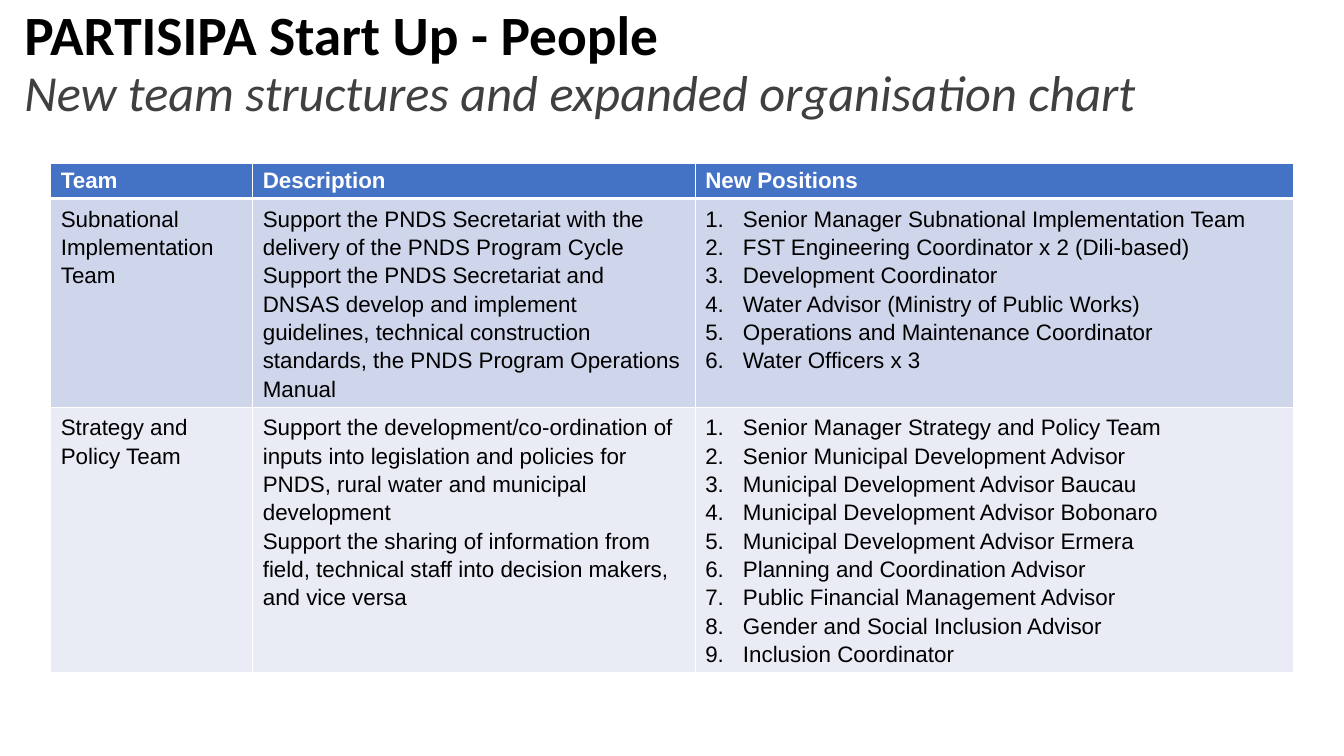
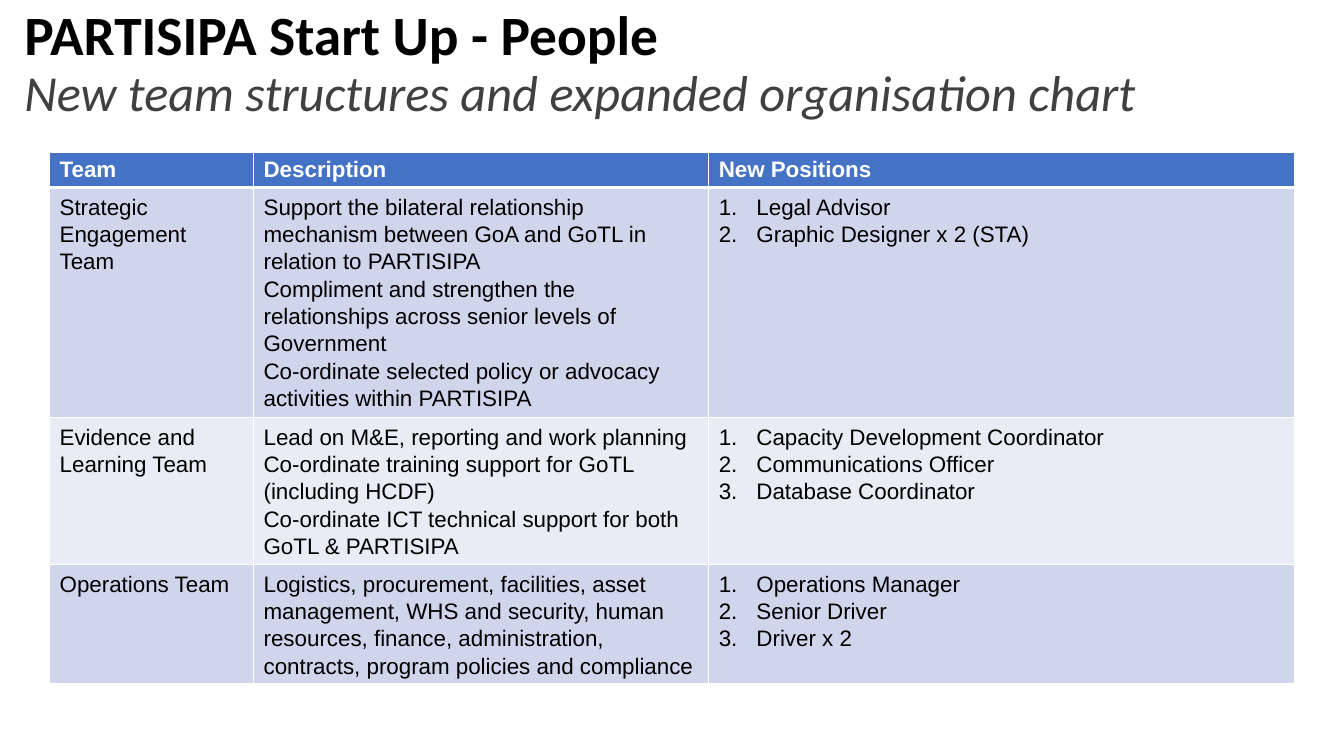
from lxml import etree
from pptx import Presentation
from pptx import util as u
from pptx.dml.color import RGBColor
from pptx.enum import text
from pptx.oxml import ns

COLOURS = {
    "title": "000000",
    "subtitle": "404040",
    "header": "4472C4",
    "header_text": "FFFFFF",
    "body_text": "000000",
    "odd_row": "CFD5EA",
    "even_row": "E9EBF5",
    "border": "FFFFFF",
}
TITLE = "PARTISIPA Start Up - People"
SUBTITLE = "New team structures and expanded organisation chart"
HEADINGS = ["Team", "Description", "New Positions"]
NUMBERED_COLUMN = 2
NUMBER_INDENT = u.Cm(0.95)
HEADER_HEIGHT = 0.87
THIN, THICK = u.Pt(1), u.Pt(3)

# Each row: team, descriptions, new positions
DELIVERY_TEAMS = [
    (["Subnational Implementation Team"],
     ["Support the PNDS Secretariat with the delivery of the PNDS Program Cycle",
      "Support the PNDS Secretariat and DNSAS develop and implement guidelines, "
      "technical construction standards, the PNDS Program Operations Manual"],
     ["Senior Manager Subnational Implementation Team",
      "FST Engineering Coordinator x 2 (Dili-based)",
      "Development Coordinator",
      "Water Advisor (Ministry of Public Works)",
      "Operations and Maintenance Coordinator",
      "Water Officers x 3"]),
    (["Strategy and Policy Team"],
     ["Support the development/co-ordination of inputs into legislation and "
      "policies for PNDS, rural water and municipal development",
      "Support the sharing of information from field, technical staff into "
      "decision makers, and vice versa"],
     ["Senior Manager Strategy and Policy Team",
      "Senior Municipal Development Advisor",
      "Municipal Development Advisor Baucau",
      "Municipal Development Advisor Bobonaro",
      "Municipal Development Advisor Ermera",
      "Planning and Coordination Advisor",
      "Public Financial Management Advisor",
      "Gender and Social Inclusion Advisor",
      "Inclusion Coordinator"]),
]
SUPPORT_TEAMS = [
    (["Strategic Engagement Team"],
     ["Support the bilateral relationship mechanism between GoA and GoTL in "
      "relation to PARTISIPA",
      "Compliment and strengthen the relationships across senior levels of Government",
      "Co-ordinate selected policy or advocacy activities within PARTISIPA"],
     ["Legal Advisor", "Graphic Designer x 2 (STA)"]),
    (["Evidence and Learning Team"],
     ["Lead on M&E, reporting and work planning",
      "Co-ordinate training support for GoTL (including HCDF)",
      "Co-ordinate ICT technical support for both GoTL & PARTISIPA"],
     ["Capacity Development Coordinator", "Communications Officer",
      "Database Coordinator"]),
    (["Operations Team"],
     ["Logistics, procurement, facilities, asset management, WHS and security, "
      "human resources, finance, administration, contracts, program policies "
      "and compliance"],
     ["Operations Manager", "Senior Driver", "Driver x 2"]),
]


class TeamDeck:
    """Holds the shared style and the slide being built."""

    def __init__(self):
        self.presentation = Presentation()
        self.presentation.slide_width = u.Cm(33.87)
        self.presentation.slide_height = u.Cm(19.05)
        self.slide = None

    def add_slide(self):
        layout = self.presentation.slide_layouts.get_by_name("Title Only")
        self.slide = self.presentation.slides.add_slide(layout)

    def add_run(self, paragraph, words, size, colour, font="Arial", bold=False, italic=False):
        run = paragraph.add_run()
        run.text = words
        run.font.name = font
        run.font.size = u.Pt(size)
        run.font.bold = bold
        run.font.italic = italic
        run.font.color.rgb = RGBColor.from_string(COLOURS[colour])

    def add_title(self):
        title = self.slide.shapes.title
        title.left, title.top = u.Cm(0.36), u.Cm(0)
        title.width, title.height = u.Cm(32.39), u.Cm(3.28)
        frame = title.text_frame
        frame.auto_size = text.MSO_AUTO_SIZE.NONE
        frame.vertical_anchor = text.MSO_ANCHOR.MIDDLE
        paragraph = frame.paragraphs[0]
        paragraph.alignment = text.PP_ALIGN.LEFT
        paragraph.line_spacing = 0.9
        self.add_run(paragraph, TITLE, 39.6, "title", "Calibri", bold=True)
        paragraph.add_line_break()
        self.add_run(paragraph, SUBTITLE, 36, "subtitle", "Calibri", italic=True)

    def set_borders(self, cell, top, bottom):
        properties = cell._tc.get_or_add_tcPr()
        for side, width in (("L", THIN), ("R", THIN), ("T", top), ("B", bottom)):
            line = etree.SubElement(properties, ns.qn(f"a:ln{side}"), w=str(width))
            fill = etree.SubElement(line, ns.qn("a:solidFill"))
            etree.SubElement(fill, ns.qn("a:srgbClr"), val=COLOURS["border"])

    def number(self, paragraph):
        properties = paragraph._p.get_or_add_pPr()
        properties.set("marL", str(NUMBER_INDENT))
        properties.set("indent", str(-NUMBER_INDENT))
        etree.SubElement(properties, ns.qn("a:buAutoNum"), type="arabicPeriod")

    def fill_cell(self, cell, lines, row, numbered, spacing):
        is_header = row == 0
        self.set_borders(cell, THICK if row == 1 else THIN, THICK if is_header else THIN)
        background = "header" if is_header else "odd_row" if row % 2 else "even_row"
        cell.fill.solid()
        cell.fill.fore_color.rgb = RGBColor.from_string(COLOURS[background])
        frame = cell.text_frame
        for index, words in enumerate(lines):
            paragraph = frame.add_paragraph() if index else frame.paragraphs[0]
            if not is_header:
                paragraph.line_spacing = spacing
            if numbered:
                self.number(paragraph)
            self.add_run(paragraph, words, 16,
                         "header_text" if is_header else "body_text", bold=is_header)

    def add_team_table(self, teams, left, top, widths, heights, spacing):
        """Lengths are in centimetres; heights are those of the team rows."""
        heights = [HEADER_HEIGHT, *heights]
        rows = [[[heading] for heading in HEADINGS], *teams]
        table = self.slide.shapes.add_table(
            len(rows), len(widths), u.Cm(left), u.Cm(top),
            u.Cm(sum(widths)), u.Cm(sum(heights))).table
        for column, width in zip(table.columns, widths):
            column.width = u.Cm(width)
        for row, (height, cells) in enumerate(zip(heights, rows)):
            table.rows[row].height = u.Cm(height)
            for column, lines in enumerate(cells):
                numbered = row > 0 and column == NUMBERED_COLUMN
                self.fill_cell(table.cell(row, column), lines, row, numbered, spacing)


def main():
    deck = TeamDeck()
    tables = [
        (DELIVERY_TEAMS, 1.28, 4.12, [5.09, 11.15, 15.08], [5.26, 6.68], 1.14),
        (SUPPORT_TEAMS, 1.25, 3.84, [5.14, 11.47, 14.77], [5.8, 3.7, 3.01], 1.1),
    ]
    for table in tables:
        deck.add_slide()
        deck.add_title()
        deck.add_team_table(*table)
    deck.presentation.save("out.pptx")


if __name__ == "__main__":
    main()
